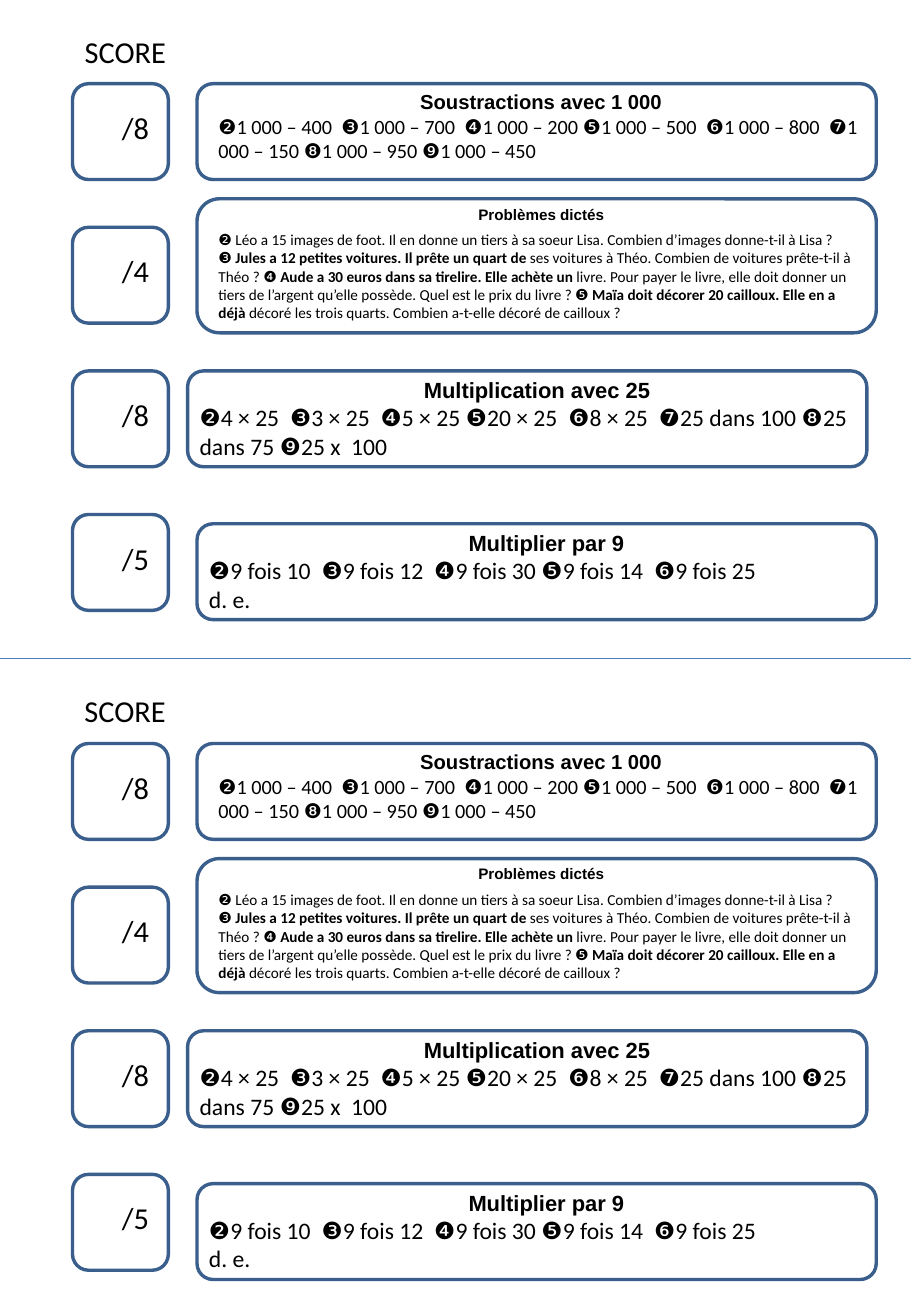
from dataclasses import dataclass
from itertools import groupby

from lxml import etree
from pptx import Presentation
from pptx.dml.color import RGBColor
from pptx.enum.shapes import MSO_CONNECTOR, MSO_SHAPE
from pptx.enum.text import MSO_ANCHOR, MSO_AUTO_SIZE, PP_ALIGN
from pptx.oxml.ns import qn
from pptx.util import Pt

FRAME_SHAPE = MSO_SHAPE.FLOWCHART_ALTERNATE_PROCESS
STRAIGHT = MSO_CONNECTOR.STRAIGHT
LEFT, CENTER = PP_ALIGN.LEFT, PP_ALIGN.CENTER
TOP = MSO_ANCHOR.TOP
NO_AUTOFIT = MSO_AUTO_SIZE.NONE

SLIDE_WIDTH, SLIDE_HEIGHT = 540, 779.8
SHEET_PITCH = 391  # from the upper sheet to the lower one
ROW_TOP, ROW_PITCH, BOX_SIZE = 49.6, 85.1, 56.8
PANEL_WIDTH = 402.6
BADGES = "❷❸❹❺❻❼❽❾"


@dataclass
class Exercise:
    """One panel; *stars* in the lines enclose bold words."""
    points: int
    left: float
    top: float
    height: float
    text_indent: float
    text_width: float
    title: str
    title_size: float
    body_size: float
    lines: list[str]
    body_gap: float = 0


EXERCISES = [
    Exercise(8, 116.8, ROW_TOP, BOX_SIZE, 5.6, 396.8, "Soustractions avec 1 000", 12, 12, [
        "❷1 000 – 400  ❸1 000 – 700  ❹1 000 – 200 ❺1 000 – 500  ❻1 000 – 800  "
        "❼1 000 – 150 ❽1 000 – 950 ❾1 000 – 450"]),
    Exercise(4, 116.8, 117.8, 79.4, 5.6, 396.8, "Problèmes dictés", 9, 9, [
        "❷ Léo a 15 images de foot. Il en donne un tiers à sa soeur Lisa. "
        "Combien d’images donne-t-il à Lisa ?",
        "❸ *Jules a 12 petites voitures. Il prête un quart de *ses voitures à Théo. "
        "Combien de voitures prête-t-il à Théo ? "
        "❹ *Aude a 30 euros dans sa tirelire. Elle achète un *livre. Pour payer le livre, "
        "elle doit donner un tiers de l’argent qu’elle possède. Quel est le prix du livre ? "
        "❺ *Maïa doit décorer 20 cailloux. Elle en a déjà *décoré les trois quarts. "
        "Combien a-t-elle décoré de cailloux ?"], body_gap=4.4),
    Exercise(8, 111.2, ROW_TOP + 2 * ROW_PITCH, BOX_SIZE, 0, 414, "Multiplication avec 25", 13, 14, [
        "❷4 × 25  ❸3 × 25  ❹5 × 25 ❺20 × 25  ❻8 × 25  ❼25 dans 100 "
        "❽25 dans 75 ❾25 x  100"]),
    Exercise(5, 116.8, 310.4, BOX_SIZE, 0, 414, "Multiplier par 9", 13, 14, [
        "❷9 fois 10  ❸9 fois 12  ❹9 fois 30 ❺9 fois 14  ❻9 fois 25",
        "d. e."]),
]


def color(hex_code: str) -> RGBColor:
    return RGBColor.from_string(hex_code)


def format_paragraph(paragraph, size: float, font_name: str = "Calibri",
                     bold: bool = False, alignment=LEFT) -> None:
    paragraph.alignment = alignment
    font = paragraph.font
    font.name, font.size, font.bold = font_name, Pt(size), bold
    font.color.rgb = color("000000")


def prepare_frame(shape):
    frame = shape.text_frame
    frame.word_wrap = True
    frame.auto_size = NO_AUTOFIT
    frame.vertical_anchor = TOP
    return frame


def add_text_frame(slide, left: float, top: float, width: float, height: float):
    return prepare_frame(slide.shapes.add_textbox(Pt(left), Pt(top), Pt(width), Pt(height)))


def add_frame(slide, left: float, top: float, width: float, height: float) -> None:
    shape = slide.shapes.add_shape(FRAME_SHAPE, Pt(left), Pt(top), Pt(width), Pt(height))
    shape.shadow.inherit = False
    shape.fill.background()
    shape.line.color.rgb = color("3A5F8C")
    shape.line.width = Pt(2)


def write_line(paragraph, line: str) -> None:
    """Split a line into runs: number badges in Arial, starred words in bold."""
    for index, part in enumerate(line.split("*")):
        for is_badge, characters in groupby(part, lambda character: character in BADGES):
            run = paragraph.add_run()
            run.text = "".join(characters)
            if is_badge:
                run.font.name = "Arial"
            if index % 2:
                run.font.bold = True


def add_heading(slide, top: float, use_title: bool) -> None:
    if use_title:
        title = slide.shapes.title
        title.left, title.top, title.width, title.height = Pt(43), Pt(top), Pt(96.5), Pt(29)
        frame = prepare_frame(title)
    else:
        frame = add_text_frame(slide, 43, top, 96.5, 29)
    frame.text = "SCORE"
    format_paragraph(frame.paragraphs[0], 18)


def add_score(slide, points: int, top: float) -> None:
    add_frame(slide, 43, top, BOX_SIZE, BOX_SIZE)
    frame = add_text_frame(slide, 48.8, top + 11.4, BOX_SIZE, 29)
    frame.margin_left = Pt(23.5)
    frame.text = f"/{points}"
    format_paragraph(frame.paragraphs[0], 18)


def add_exercise(slide, exercise: Exercise, offset: float) -> None:
    top = exercise.top + offset
    add_frame(slide, exercise.left, top, PANEL_WIDTH, exercise.height)
    frame = add_text_frame(slide, exercise.left + exercise.text_indent, top,
                           exercise.text_width, exercise.height)
    frame.text = exercise.title
    format_paragraph(frame.paragraphs[0], exercise.title_size, "Arial", True, CENTER)
    frame.paragraphs[0].space_after = Pt(exercise.body_gap)
    for line in exercise.lines:
        paragraph = frame.add_paragraph()
        format_paragraph(paragraph, exercise.body_size)
        write_line(paragraph, line)


def add_cut_line(slide) -> None:
    line = slide.shapes.add_connector(STRAIGHT, Pt(0), Pt(390), Pt(SLIDE_WIDTH), Pt(390))
    line.line.color.rgb = color("4B7EBC")
    line.line.width = Pt(0.75)
    properties = line.element.find(qn("p:spPr"))
    etree.SubElement(properties, qn("a:effectLst"))


def main() -> None:
    presentation = Presentation()
    presentation.slide_width, presentation.slide_height = Pt(SLIDE_WIDTH), Pt(SLIDE_HEIGHT)
    slide = presentation.slides.add_slide(presentation.slide_layouts[5])

    add_cut_line(slide)

    # Two identical sheets, one above the other
    for sheet in range(2):
        offset = sheet * SHEET_PITCH
        add_heading(slide, 15.8 + offset, use_title=sheet == 0)
        for row, exercise in enumerate(EXERCISES):
            add_score(slide, exercise.points, ROW_TOP + row * ROW_PITCH + offset)
            add_exercise(slide, exercise, offset)

    presentation.save("out.pptx")


if __name__ == "__main__":
    main()
